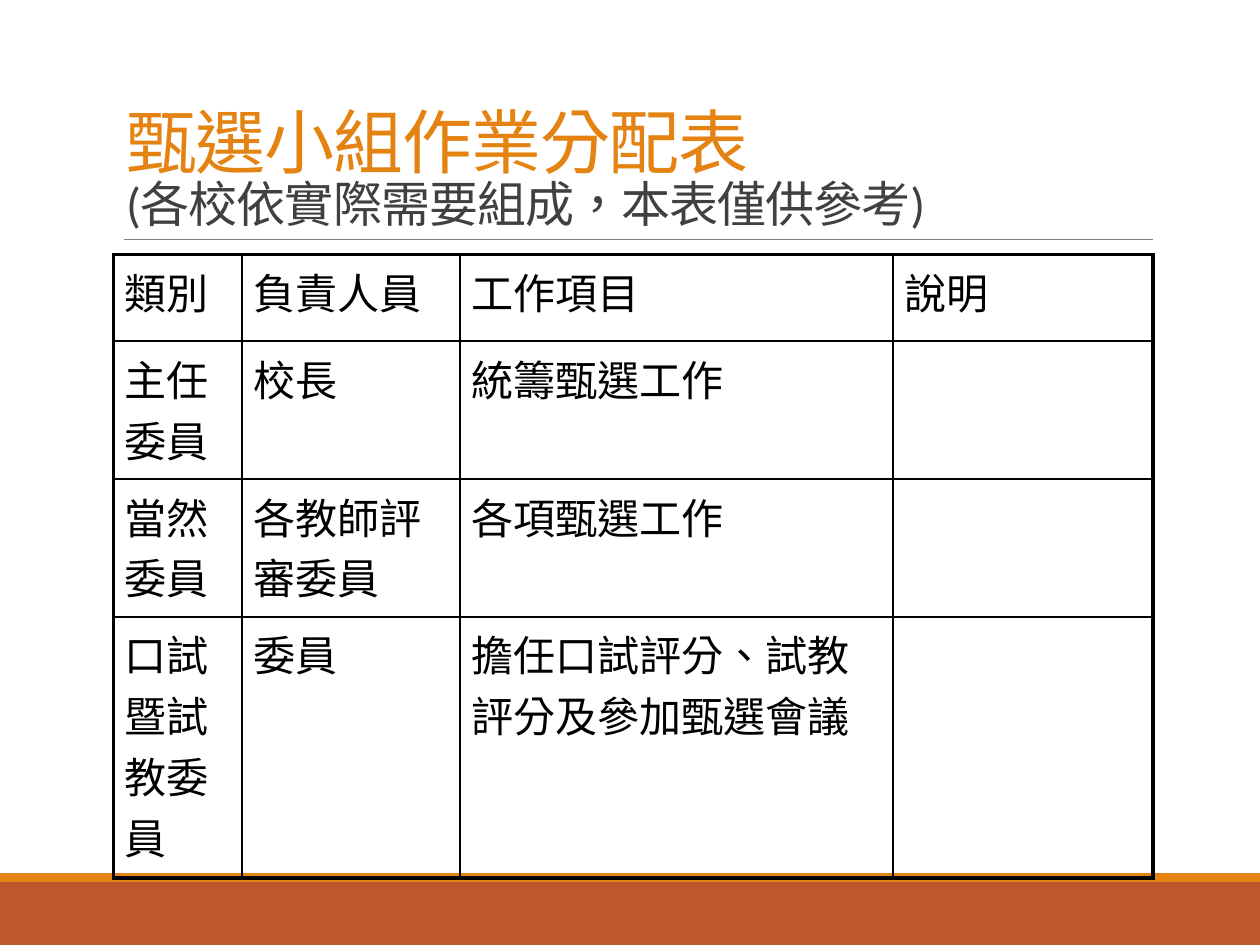
"""Build the slide that assigns the work of the selection panel."""
from lxml import etree
from pptx import Presentation
from pptx.dml.color import RGBColor
from pptx.enum import lang, shapes, text
from pptx.oxml import ns
from pptx.util import Pt

TITLE = "甄選小組作業分配表"
SUBTITLE = "(各校依實際需要組成，本表僅供參考)"
ROWS = [
    ("類別", "負責人員", "工作項目", "說明"),
    ("主任委員", "校長", "統籌甄選工作", ""),
    ("當然委員", "各教師評審委員", "各項甄選工作", ""),
    ("口試暨試教委員", "委員", "擔任口試評分、試教評分及參加甄選會議", ""),
]
COLUMN_WIDTHS = (73.5, 124.5, 247.5, 148.5)
ROW_HEIGHTS = (49.5, 78.75, 78.75, 149.25)
SLIDE = (720, 540)
TITLE_BOX = (64.8, 22.5, 594, 114.2)
TABLE_ORIGIN = (64.8, 145.5)
RULE = (70.6, 136.8, 658.8, 136.8)
BANDS = [((0, 504, 720, 36), "band"), ((0, 499, 720, 5), "accent")]
THEME = {
    "accent": "E48312", "band": "BD582C", "subtitle": "404040",
    "ink": "000000", "rule": "808080",
    "latin": "Calibri", "east_asian": "Noto Sans CJK SC",
    "title_size": 40, "subtitle_size": 28, "cell_size": 24,
    "rule_width": 0.5, "inner_width": 1, "outer_width": 2.25,
}


def colour(name):
    return RGBColor.from_string(THEME[name])


def points(values):
    return [Pt(value) for value in values]


def set_values(target, values):
    for name, value in values.items():
        setattr(target, name, value)


def child(parent, tag, **attributes):
    return etree.SubElement(parent, ns.qn(tag), attributes)


def add_run(paragraph, words, size, ink, latin):
    run = paragraph.add_run()
    run.text = words
    set_values(run.font, {
        "size": Pt(THEME[size]), "name": THEME[latin],
        "language_id": lang.MSO_LANGUAGE_ID.TRADITIONAL_CHINESE,
    })
    run.font.color.rgb = colour(ink)
    child(run.font._element, "a:ea", typeface=THEME["east_asian"])
    return run


def add_band(slide, box, fill):
    band = slide.shapes.add_shape(shapes.MSO_SHAPE.RECTANGLE, *points(box))
    band.shadow.inherit = False
    band.fill.solid()
    band.fill.fore_color.rgb = colour(fill)
    band.line.fill.background()


def add_rule(slide):
    rule = slide.shapes.add_connector(shapes.MSO_CONNECTOR.STRAIGHT, *points(RULE))
    rule.line.color.rgb = colour("rule")
    rule.line.width = Pt(THEME["rule_width"])
    child(rule._element.spPr, "a:effectLst")


def fill_title(title):
    set_values(title, dict(zip(("left", "top", "width", "height"), points(TITLE_BOX))))
    set_values(title.text_frame, {
        "vertical_anchor": text.MSO_ANCHOR.BOTTOM, "word_wrap": True,
        "auto_size": text.MSO_AUTO_SIZE.NONE,
    })
    paragraph = title.text_frame.paragraphs[0]
    set_values(paragraph, {"alignment": text.PP_ALIGN.LEFT, "line_spacing": 0.85})
    heading = add_run(paragraph, TITLE, "title_size", "accent", "latin")
    paragraph.add_line_break()
    note = add_run(paragraph, SUBTITLE, "subtitle_size", "subtitle", "latin")
    for run in (heading, note):
        run.font._element.set("spc", "-50")


def add_borders(cell, outer_sides):
    properties = cell._tc.get_or_add_tcPr()
    for side, is_outer in outer_sides.items():
        width = THEME["outer_width" if is_outer else "inner_width"]
        line = child(properties, f"a:ln{side}", w=str(Pt(width)))
        child(child(line, "a:solidFill"), "a:srgbClr", val=THEME["ink"])


def fill_cell(cell, words):
    set_values(cell, {
        "margin_left": Pt(6.6), "margin_right": Pt(6.6),
        "margin_top": Pt(3.6), "margin_bottom": Pt(3.6),
    })
    paragraph = cell.text_frame.paragraphs[0]
    before = child(paragraph._p.get_or_add_pPr(), "a:spcBef")
    child(before, "a:spcPct", val="20000")
    if words:
        add_run(paragraph, words, "cell_size", "ink", "east_asian")


def add_duty_table(slide):
    size = points((sum(COLUMN_WIDTHS), sum(ROW_HEIGHTS)))
    frame = slide.shapes.add_table(
        len(ROWS), len(COLUMN_WIDTHS), *points(TABLE_ORIGIN), *size)
    table = frame.table
    set_values(table, {"first_row": False, "horz_banding": False})
    for column, width in zip(table.columns, COLUMN_WIDTHS):
        column.width = Pt(width)
    for row, height in zip(table.rows, ROW_HEIGHTS):
        row.height = Pt(height)
    last_row, last_column = len(ROWS) - 1, len(COLUMN_WIDTHS) - 1
    for i, row in enumerate(ROWS):
        for j, words in enumerate(row):
            cell = table.cell(i, j)
            fill_cell(cell, words)
            add_borders(cell, {"L": j == 0, "R": j == last_column,
                               "T": i == 0, "B": i == last_row})
            cell.fill.background()


def main():
    presentation = Presentation()
    presentation.slide_width, presentation.slide_height = points(SLIDE)
    slide = presentation.slides.add_slide(presentation.slide_layouts[5])
    for box, fill in BANDS:
        add_band(slide, box, fill)
    add_rule(slide)
    fill_title(slide.shapes.title)
    add_duty_table(slide)
    presentation.save("out.pptx")


if __name__ == "__main__":
    main()
